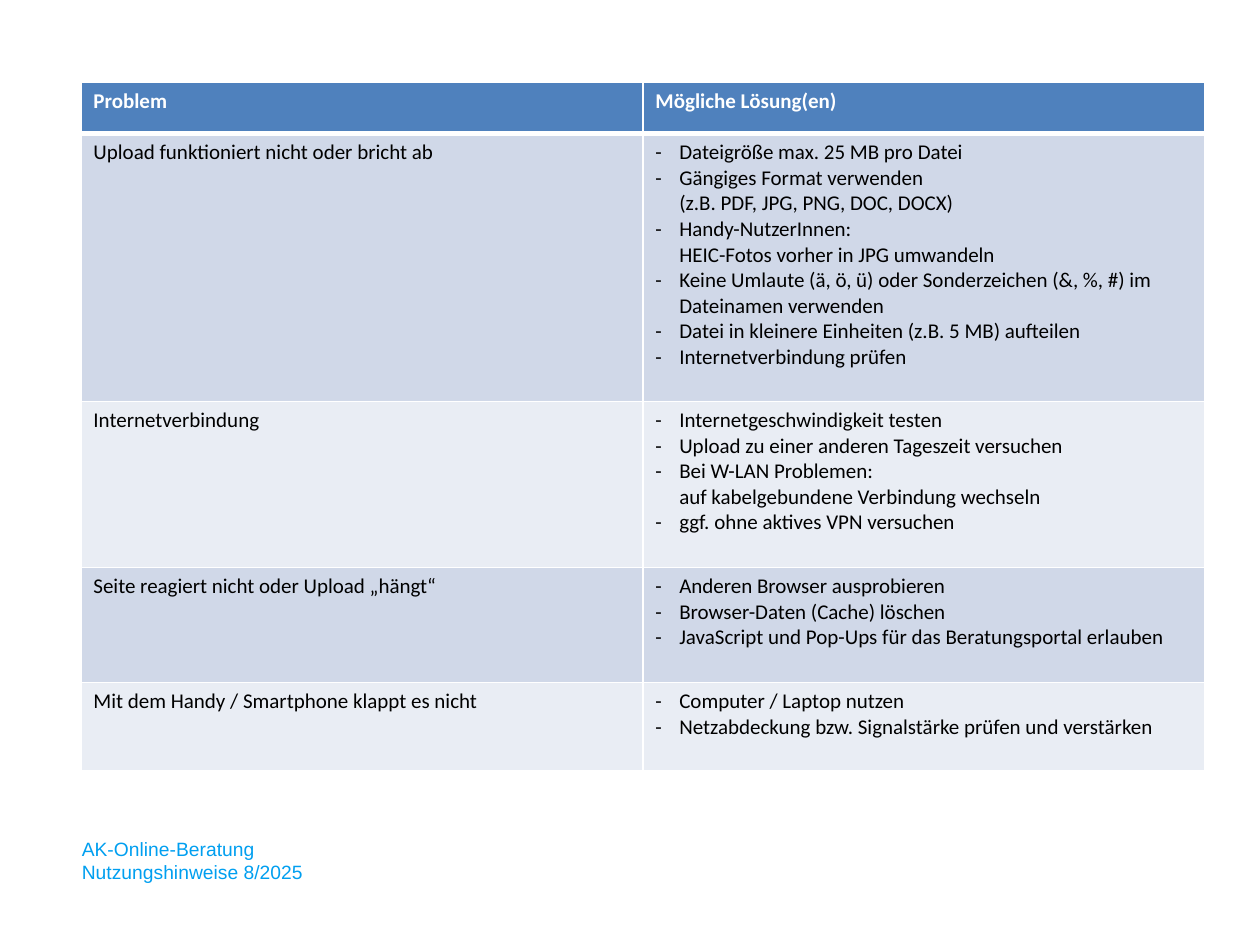
"""Build the slide with a table of upload problems and their solutions."""
from dataclasses import dataclass

from lxml.etree import SubElement
from pptx import Presentation as Deck
from pptx.dml.color import RGBColor as Rgb
from pptx.oxml.ns import qn
from pptx.util import Cm, Pt

WHITE, BLACK, BLUE, CYAN = "FFFFFF", "000000", "4F81BD", "009FF0"
BANDS = ("D0D8E8", "E9EDF4")
HEADER_HEIGHT = 1.04


@dataclass
class Entry:
    problem: str
    solutions: list[str]
    height: float


ENTRIES = [
    Entry("Upload funktioniert nicht oder bricht ab", [
        "Dateigröße max. 25 MB pro Datei",
        "Gängiges Format verwenden\n(z.B. PDF, JPG, PNG, DOC, DOCX)",
        "Handy-NutzerInnen:\nHEIC-Fotos vorher in JPG umwandeln",
        "Keine Umlaute (ä, ö, ü) oder Sonderzeichen (&, %, #) im Dateinamen verwenden",
        "Datei in kleinere Einheiten (z.B. 5 MB) aufteilen",
        "Internetverbindung prüfen",
    ], 5.4),
    Entry("Internetverbindung", [
        "Internetgeschwindigkeit testen",
        "Upload zu einer anderen Tageszeit versuchen",
        "Bei W-LAN Problemen:\nauf kabelgebundene Verbindung wechseln",
        "ggf. ohne aktives VPN versuchen",
    ], 3.35),
    Entry("Seite reagiert nicht oder Upload „hängt“", [
        "Anderen Browser ausprobieren",
        "Browser-Daten (Cache) löschen",
        "JavaScript und Pop-Ups für das Beratungsportal erlauben",
    ], 2.32),
    Entry("Mit dem Handy / Smartphone klappt es nicht", [
        "Computer / Laptop nutzen",
        "Netzabdeckung bzw. Signalstärke prüfen und verstärken",
    ], 1.78),
]


def paint(target, color: str) -> None:
    target.solid()
    target.fore_color.rgb = Rgb.from_string(color)


def write(para, text: str, *, size: float = 12, font: str = "Calibri",
          color: str = BLACK, bold: bool = False, left: float = 0,
          hanging: float = 0, bullet: str = "") -> None:
    para.text = text.replace("\n", "\v")
    props = para._p.get_or_add_pPr()
    props.set("marL", str(Cm(left)))
    props.set("indent", str(-Cm(hanging)))
    if bullet:
        SubElement(props, qn("a:buFont"), typeface=font)
        SubElement(props, qn("a:buChar"), char=bullet)
    for line_break in para._p.findall(qn("a:br")):
        SubElement(line_break, qn("a:rPr"), sz=str(Pt(size).centipoints))
    for span in para.runs:
        span.font.size, span.font.name, span.font.bold = Pt(size), font, bold
        paint(span.font.fill, color)


def add_borders(cell, top: float, bottom: float) -> None:
    props = cell._tc.get_or_add_tcPr()
    for side, width in (("L", 1), ("R", 1), ("T", top), ("B", bottom)):
        line = SubElement(props, qn(f"a:ln{side}"), w=str(Pt(width)))
        fill = SubElement(line, qn("a:solidFill"))
        SubElement(fill, qn("a:srgbClr"), val=WHITE)


def fill_cell(cell, lines: list[str], fill: str, *, top: float = 1,
              bottom: float = 1, **style) -> None:
    add_borders(cell, top, bottom)
    paint(cell.fill, fill)
    frame = cell.text_frame
    for index, text in enumerate(lines):
        para = frame.add_paragraph() if index else frame.paragraphs[0]
        write(para, text, **style)


def add_problem_table(page) -> None:
    heights = [HEADER_HEIGHT] + [entry.height for entry in ENTRIES]
    table = page.shapes.add_table(len(heights), 2, Cm(1.63), Cm(1.65),
                                  Cm(22.66), Cm(sum(heights))).table
    for row, height in zip(table.rows, heights):
        row.height = Cm(height)
    for column, heading in enumerate(("Problem", "Mögliche Lösung(en)")):
        fill_cell(table.cell(0, column), [heading], BLUE, bottom=3,
                  color=WHITE, bold=True)
    for index, entry in enumerate(ENTRIES):
        band, top = BANDS[index % 2], 1 if index else 3
        fill_cell(table.cell(index + 1, 0), [entry.problem], band, top=top)
        fill_cell(table.cell(index + 1, 1), entry.solutions, band, top=top,
                  left=0.48, hanging=0.48, bullet="-")


def add_footer(page) -> None:
    box = page.shapes.add_textbox(Cm(0), Cm(16.76), Cm(10.36), Cm(1.19))
    box.text_frame.word_wrap = True
    write(box.text_frame.paragraphs[0],
          "AK-Online-Beratung\nNutzungshinweise 8/2025",
          size=11, font="Arial", color=CYAN, left=1.4)


def main() -> None:
    deck = Deck()
    deck.slide_width, deck.slide_height = Cm(25.4), Cm(19.05)
    page = deck.slides.add_slide(deck.slide_layouts[6])
    add_footer(page)
    add_problem_table(page)
    deck.save("out.pptx")


if __name__ == "__main__":
    main()
